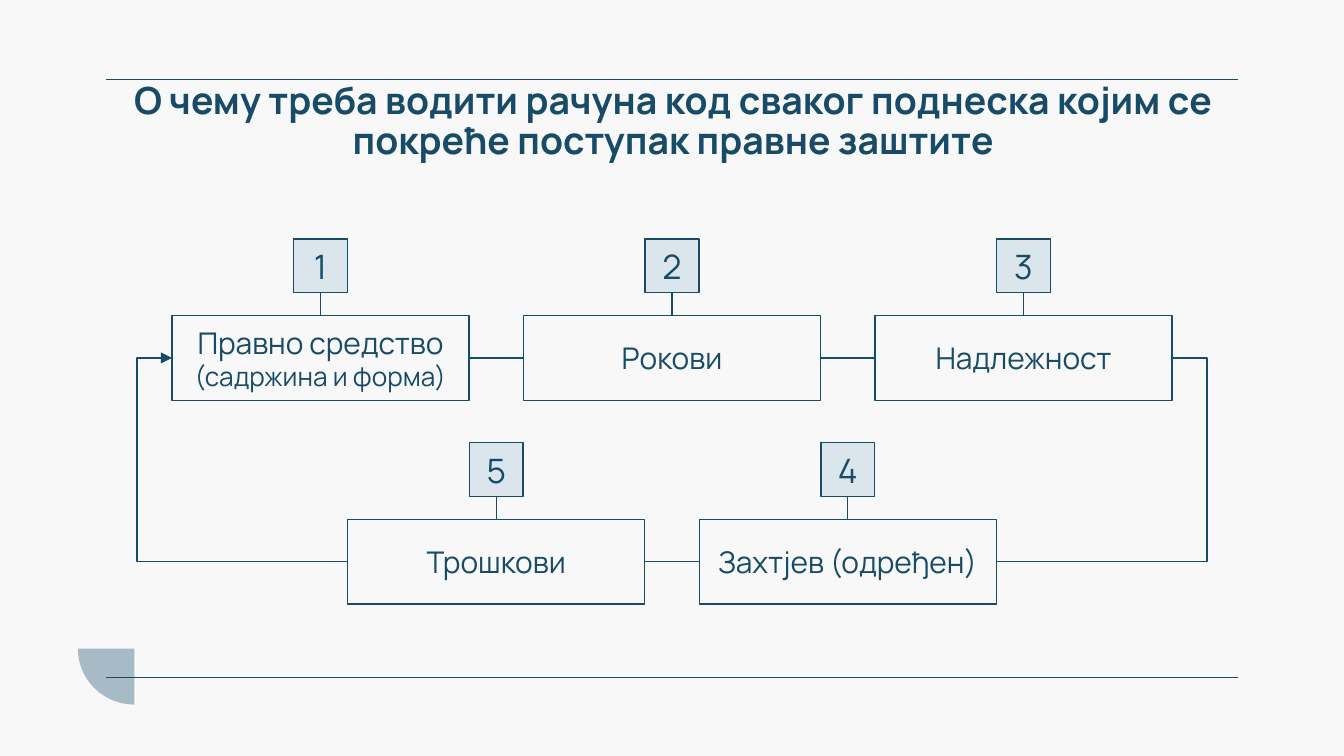
from dataclasses import dataclass
from math import cos, pi, sin

from lxml.etree import SubElement
from pptx import Presentation
from pptx.dml.color import RGBColor
from pptx.enum.shapes import MSO_CONNECTOR as Connector, MSO_SHAPE as Shape
from pptx.enum.text import MSO_ANCHOR as Anchor, MSO_AUTO_SIZE as AutoSize, PP_ALIGN as Align
from pptx.oxml.ns import qn
from pptx.util import Inches, Pt

TOP, LEFT, BOTTOM, RIGHT = range(4)


@dataclass(frozen=True)
class Theme:
    font: str = "Manrope"
    background: RGBColor = RGBColor(0xF8, 0xF8, 0xF8)
    ink: RGBColor = RGBColor(0x17, 0x4B, 0x67)
    badge: RGBColor = RGBColor(0xDA, 0xE6, 0xEC)
    ornament: RGBColor = RGBColor(0xA7, 0xBB, 0xC7)
    title_size: int = 20
    badge_size: int = 18
    label_size: int = 16
    note_size: int = 14
    line_width: float = 0.75


THEME = Theme()


@dataclass(frozen=True)
class Box:
    """A rectangle in inches."""
    left: float
    top: float
    width: float
    height: float

    def inner(self, left, top, width, height):
        """Return the inner box given as shares of this one."""
        return Box(self.left + left * self.width, self.top + top * self.height,
                   width * self.width, height * self.height)

    def lengths(self):
        return [Inches(value) for value in (self.left, self.top, self.width, self.height)]


SLIDE = Box(0, 0, 10, 5.625)
TITLE = SLIDE.inner(0.079, 0.091, 0.844, 0.102)
FRAME = SLIDE.inner(0.079, 0.105, 0.842, 0.791)
ORNAMENT = SLIDE.inner(0.058, 0.858, 0.042, 0.074)
FLOW = SLIDE.inner(0.128, 0.316, 0.744, 0.483)

# Each step: number, column in half-steps, row, main label, smaller note
STEPS = [
    (1, 0, 0, "Правно средство ", "(садржина и форма)"),
    (2, 2, 0, "Рокови", ""),
    (3, 4, 0, "Надлежност", ""),
    (4, 3, 1, "Захтјев (одређен)", ""),
    (5, 1, 1, "Трошкови", ""),
]
# Each link: from step, side, to step, side, position of the bend, arrowhead
LINKS = [
    (1, RIGHT, 2, LEFT, 0.5, False),
    (2, RIGHT, 3, LEFT, 0.5, False),
    (3, RIGHT, 4, RIGHT, -0.2, False),
    (4, LEFT, 5, RIGHT, 0.5, False),
    (5, LEFT, 1, LEFT, 1.2, True),
]


def add_text(paragraph, text, size, bold=False):
    paragraph.alignment = Align.CENTER
    run = paragraph.add_run()
    run.text = text
    run.font.name = THEME.font
    run.font.size = Pt(size)
    run.font.bold = bold
    run.font.color.rgb = THEME.ink


def format_frame(frame, anchor):
    frame.word_wrap = True
    frame.auto_size = AutoSize.NONE
    frame.vertical_anchor = anchor
    frame.margin_left = frame.margin_right = Inches(0.1)
    frame.margin_top = frame.margin_bottom = Inches(0.1)


def add_rectangle(slide, box, fill=None):
    shape = slide.shapes.add_shape(Shape.RECTANGLE, *box.lengths())
    shape.shadow.inherit = False
    if fill is None:
        shape.fill.background()
    else:
        shape.fill.solid()
        shape.fill.fore_color.rgb = fill
    shape.line.color.rgb = THEME.ink
    shape.line.width = Pt(THEME.line_width)
    format_frame(shape.text_frame, Anchor.MIDDLE)
    return shape


def add_line(slide, kind=Connector.STRAIGHT, start=(0, 0), end=(0, 0)):
    points = [Inches(value) for value in (*start, *end)]
    connector = slide.shapes.add_connector(kind, *points)
    connector.line.color.rgb = THEME.ink
    connector.line.width = Pt(THEME.line_width)
    SubElement(connector._element.spPr, qn("a:effectLst"))
    return connector


def join(slide, first, first_side, second, second_side, kind=Connector.STRAIGHT):
    connector = add_line(slide, kind)
    connector.begin_connect(first, first_side)
    connector.end_connect(second, second_side)
    return connector


def add_link(slide, first, first_side, second, second_side, bend, arrow):
    connector = join(slide, first, first_side, second, second_side, Connector.ELBOW)
    properties = connector._element.spPr
    guides = properties.find(qn("a:prstGeom")).get_or_add_avLst()
    SubElement(guides, qn("a:gd"), name="adj1", fmla=f"val {round(bend * 100000)}")
    if arrow:
        SubElement(properties.find(qn("a:ln")), qn("a:tailEnd"), type="triangle")


def add_ornament(slide, box, segments=32):
    """Draw a quarter disc whose centre is the top right corner of the box."""
    angles = [pi / 2 * step / segments for step in range(segments + 1)]
    right = box.left + box.width
    arc = [(Inches(right - box.width * cos(angle)), Inches(box.top + box.height * sin(angle)))
           for angle in angles]
    builder = slide.shapes.build_freeform(Inches(right), Inches(box.top))
    builder.add_line_segments(arc, close=True)
    shape = builder.convert_to_shape()
    shape.shadow.inherit = False
    shape.fill.solid()
    shape.fill.fore_color.rgb = THEME.ornament
    shape.line.fill.background()


def add_frame_lines(slide, box):
    for y in (box.top, box.top + box.height):
        add_line(slide, start=(box.left, y), end=(box.left + box.width, y))


def add_title(slide, box, text):
    title = slide.shapes.title
    title.left, title.top, title.width, title.height = box.lengths()
    format_frame(title.text_frame, Anchor.TOP)
    paragraph = title.text_frame.paragraphs[0]
    paragraph.line_spacing = 0.9
    add_text(paragraph, text, THEME.title_size, bold=True)


def add_step(slide, box, number, label, note):
    """Place a numbered badge, its stem and the label box; return the label box."""
    side = box.height / 3
    badge_share = side / box.width
    card = add_rectangle(slide, box.inner(0, 0.475, 1, 0.525))
    paragraph = card.text_frame.paragraphs[0]
    add_text(paragraph, label, THEME.label_size)
    if note:
        add_text(paragraph, note, THEME.note_size)
    badge = add_rectangle(slide, box.inner((1 - badge_share) / 2, 0, badge_share, 1 / 3),
                          THEME.badge)
    add_text(badge.text_frame.paragraphs[0], str(number), THEME.badge_size)
    join(slide, badge, BOTTOM, card, TOP)
    return card


def add_flow(slide, box):
    """Lay the steps out on half-step columns and two rows, then link them."""
    width, height = 0.297, 0.442
    column, row = (1 - width) / 4, 1 - height
    cards = {}
    for number, across, down, label, note in STEPS:
        cell = box.inner(across * column, down * row, width, height)
        cards[number] = add_step(slide, cell, number, label, note)
    for first, first_side, second, second_side, bend, arrow in LINKS:
        add_link(slide, cards[first], first_side, cards[second], second_side, bend, arrow)


def main():
    presentation = Presentation()
    presentation.slide_width = Inches(SLIDE.width)
    presentation.slide_height = Inches(SLIDE.height)
    slide = presentation.slides.add_slide(presentation.slide_layouts.get_by_name("Title Only"))
    slide.background.fill.solid()
    slide.background.fill.fore_color.rgb = THEME.background
    add_ornament(slide, ORNAMENT)
    add_frame_lines(slide, FRAME)
    add_title(slide, TITLE,
              "О чему треба водити рачуна код сваког поднеска којим се покреће поступак правне заштите")
    add_flow(slide, FLOW)
    presentation.save("out.pptx")


if __name__ == "__main__":
    main()
